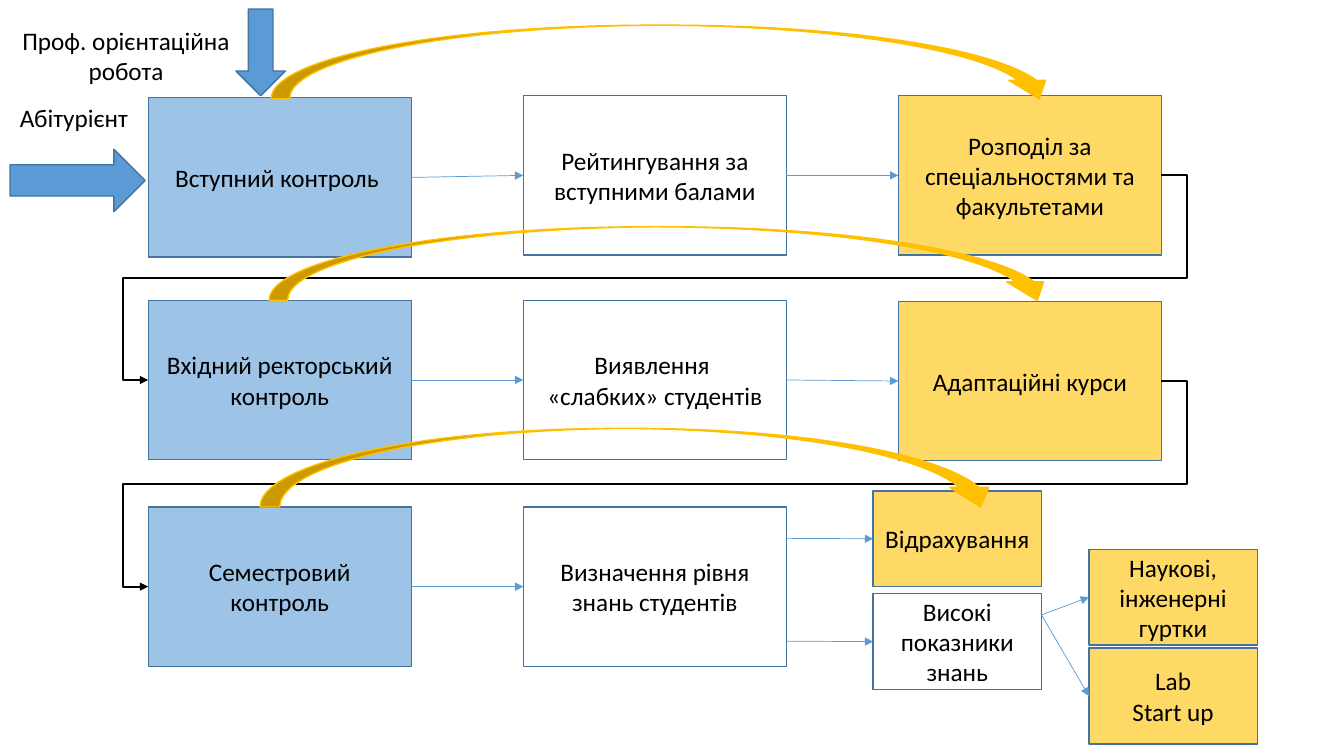
"""Build the slide on student knowledge control stages."""
from dataclasses import dataclass
from lxml import etree
from pptx import Presentation
from pptx import util as u
from pptx.dml.color import RGBColor
from pptx.enum import shapes, text
from pptx.oxml import ns


@dataclass
class Theme:
    blue: str = "9DC3E6"
    white: str = "FFFFFF"
    gold: str = "FFD966"
    arc: str = "FFC000"
    arrow: str = "5B9BD5"
    edge: str = "43739E"
    ink: str = "000000"
    font: str = "Calibri"
    size: int = 18


theme = Theme()
kind = shapes.MSO_SHAPE
deck = Presentation()
deck.slide_width, deck.slide_height = u.Inches(13.33), u.Inches(7.5)
slide = deck.slides.add_slide(deck.slide_layouts[6])


def block(form, area, fill, edge, words=""):
    """Draw a filled shape, or a plain label when form is None."""
    place = [u.Inches(n) for n in area]
    if form is None:
        item = slide.shapes.add_textbox(*place)
        item.text_frame.auto_size = text.MSO_AUTO_SIZE.SHAPE_TO_FIT_TEXT
    else:
        item = slide.shapes.add_shape(form, *place)
        item.shadow.inherit = False
        item.fill.solid()
        item.fill.fore_color.rgb = RGBColor.from_string(fill)
        item.line.color.rgb = RGBColor.from_string(edge)
        item.line.width = u.Pt(1)
        item.text_frame.vertical_anchor = text.MSO_ANCHOR.MIDDLE
    frame = item.text_frame
    frame.word_wrap = True
    for i, part in enumerate(words.split("\n") if words else []):
        para = frame.add_paragraph() if i else frame.paragraphs[0]
        para.alignment = text.PP_ALIGN.CENTER
        run = para.add_run()
        run.text = part
        run.font.name, run.font.size = theme.font, u.Pt(theme.size)
        run.font.color.rgb = RGBColor.from_string(theme.ink)
    return item


def link(start, end, color, width, bent=False):
    """Join a box or point to the left side of a box with an arrow."""
    form = shapes.MSO_CONNECTOR.ELBOW if bent else shapes.MSO_CONNECTOR.STRAIGHT
    point = isinstance(start, tuple)
    spot = [u.Inches(n) for n in start] if point else [0, 0]
    wire = slide.shapes.add_connector(form, *spot, *spot)
    if not point:
        wire.begin_connect(start, 3)
    wire.end_connect(end, 1)
    wire.line.color.rgb = RGBColor.from_string(color)
    wire.line.width = u.Pt(width)
    etree.SubElement(wire.line._get_or_add_ln(), ns.qn("a:tailEnd"), type="triangle")
    props = wire._element.spPr
    etree.SubElement(props, ns.qn("a:effectLst"))
    if bent:
        geom = props.find(ns.qn("a:prstGeom"))
        geom.set("prst", "bentConnector5")
        guides = geom.find(ns.qn("a:avLst"))
        for i, value in enumerate((-2500, 50000, 102500), 1):
            etree.SubElement(guides, ns.qn("a:gd"), name=f"adj{i}", fmla=f"val {value}")


results = [
    (8.66, 4.87, theme.gold, "Відрахування"),
    (8.66, 5.89, theme.white, "Високі показники знань"),
    (10.8, 5.45, theme.gold, "Наукові, інженерні гуртки"),
    (10.8, 6.43, theme.gold, "Lab\nStart up"),
]
starts = [(7.55, 5.34), (7.55, 6.36), (10.33, 6.1), (10.33, 6.1)]
for (left, top, fill, words), start in zip(results, starts):
    box = block(kind.RECTANGLE, (left, top, 1.67, 0.95), fill, theme.edge, words)
    link(start, box, theme.arrow, 0.5)

stages = [
    [(0.97, "Вступний контроль "), (0.95, "Рейтингування за вступними балами"),
     (0.95, "Розподіл за спеціальностями та факультетами")],
    [(2.98, "Вхідний ректорський контроль"), (2.98, "Виявлення \n«слабких» студентів"),
     (2.99, "Адаптаційні курси")],
    [(5.03, "Семестровий контроль"), (5.03, "Визначення рівня знань студентів")],
]
fills = [theme.blue, theme.white, theme.gold]
rows = []
for stage in stages:
    row = [block(kind.RECTANGLE, (1.47 + 3.72 * i, top, 2.61, 1.58), fills[i], theme.edge, words)
           for i, (top, words) in enumerate(stage)]
    for start, end in zip(row, row[1:]):
        link(start, end, theme.arrow, 0.5)
    rows.append(row)
for above, below in zip(rows, rows[1:]):
    link(above[-1], below[0], theme.ink, 1.5, bent=True)

for area in [(2.69, 0.25, 7.8, 0.73), (2.67, 2.25, 7.8, 0.73), (2.58, 4.25, 7.34, 0.78)]:
    block(kind.CURVED_DOWN_ARROW, area, theme.arc, theme.arc)

block(kind.RIGHT_ARROW, (0.1, 1.48, 1.34, 0.62), theme.arrow, theme.edge)
block(kind.DOWN_ARROW, (2.34, 0.09, 0.49, 0.86), theme.arrow, theme.edge)
label = block(None, (0.1, 0.97, 1.34, 0.4), None, None, "Абітурієнт")
label.text_frame.paragraphs[0].alignment = text.PP_ALIGN.LEFT
block(None, (0.1, 0.2, 2.3, 0.71), None, None, "Проф. орієнтаційна робота")

deck.save("out.pptx")
